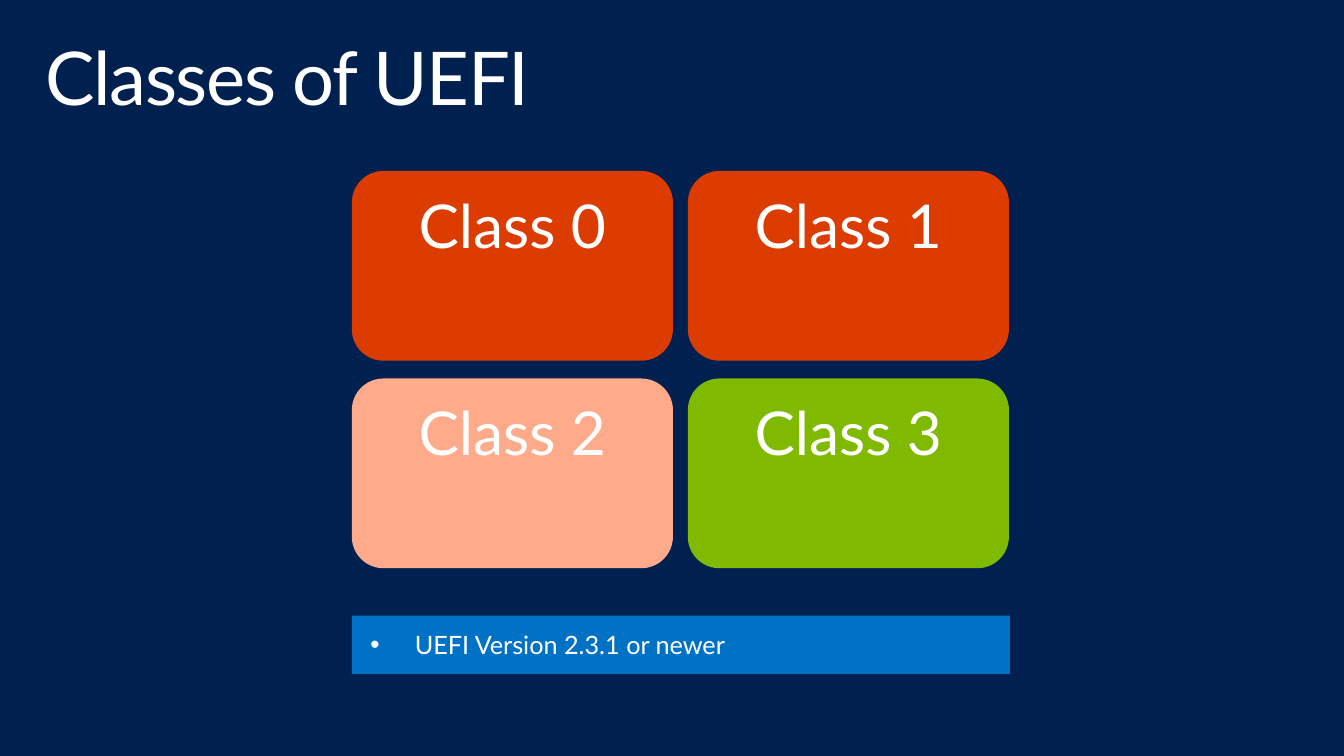
import pptx
import pptx.util
import pptx.dml.color
import pptx.enum.shapes
import pptx.enum.text
import lxml.etree
from pptx.util import Inches

MSO_SHAPE = pptx.enum.shapes.MSO_SHAPE
PP_ALIGN = pptx.enum.text.PP_ALIGN


def rgb(value):
    """Turn a hex string into a colour."""
    return pptx.dml.color.RGBColor.from_string(value)


class Deck:
    """Hold the style and the current slide."""

    font = "Lato"
    text_color = "FFFFFF"
    background = "002050"

    def __init__(self, prs):
        """Add a blank slide with the background colour."""
        self.s = prs.slides.add_slide(prs.slide_layouts[6])
        fill = self.s.background.fill
        fill.solid()
        fill.fore_color.rgb = rgb(self.background)

    def set_text(self, sp, text, size, inset_x, inset_y, align=PP_ALIGN.LEFT):
        """Put one styled paragraph in a shape and return it."""
        tf = sp.text_frame
        tf.text = text
        tf.word_wrap = True
        tf.vertical_anchor = pptx.enum.text.MSO_ANCHOR.TOP
        tf.margin_left = tf.margin_right = Inches(inset_x)
        tf.margin_top = tf.margin_bottom = Inches(inset_y)
        p = tf.paragraphs[0]
        p.alignment = align
        p.line_spacing = 0.9
        font = p.runs[0].font
        font.name = self.font
        font.size = pptx.util.Pt(size)
        font.color.rgb = rgb(self.text_color)
        return p

    def text(self, x, y, w, h, text, size, inset_x, inset_y):
        """Add a text box and return its paragraph."""
        sp = self.s.shapes.add_textbox(Inches(x), Inches(y), Inches(w), Inches(h))
        return self.set_text(sp, text, size, inset_x, inset_y)

    def title(self, x, y, w, h, text):
        """Add the slide title with tightened letters."""
        p = self.text(x, y, w, h, text, 54, 0.16, 0.1)
        p.runs[0]._r.get_or_add_rPr().set("spc", "-100")

    def shape(self, kind, x, y, w, h, color):
        """Add a filled shape without outline."""
        sp = self.s.shapes.add_shape(kind, Inches(x), Inches(y), Inches(w), Inches(h))
        sp.shadow.inherit = False
        sp.fill.solid()
        sp.fill.fore_color.rgb = rgb(color)
        sp.line.fill.background()
        return sp

    def card(self, x, y, w, h, text, color):
        """Add a rounded card with a centred heading."""
        sp = self.shape(MSO_SHAPE.ROUNDED_RECTANGLE, x, y, w, h, color)
        self.set_text(sp, text, 44, 0.2, 0.16, PP_ALIGN.CENTER)

    def bullet(self, x, y, w, h, text):
        """Add a text box with one bulleted line."""
        p = self.text(x, y, w, h, text, 18.4, 0.1, 0.05)
        pPr = p._p.get_or_add_pPr()
        pPr.set("marL", str(Inches(0.45)))
        pPr.set("indent", str(-Inches(0.45)))
        ns = "{http://schemas.openxmlformats.org/drawingml/2006/main}"
        for tag, key, value in (
            ("buSzPct", "val", "105000"),
            ("buFont", "typeface", "Arial"),
            ("buChar", "char", "•"),
        ):
            lxml.etree.SubElement(pPr, ns + tag).set(key, value)


def main():
    """Build the slide and save it."""
    prs = pptx.Presentation()
    prs.slide_width, prs.slide_height = Inches(13.6), Inches(7.65)
    deck = Deck(prs)
    deck.title(0.3, 0.32, 13, 1, "Classes of UEFI")

    left, top = 3.56, 1.73
    for i, color in enumerate(("DC3C00", "DC3C00", "FFAB8B", "7FBA00")):
        row, col = divmod(i, 2)
        deck.card(left + col * 3.4, top + row * 2.1, 3.25, 1.92, f"Class {i}", color)

    deck.shape(MSO_SHAPE.RECTANGLE, left, 6.23, 6.66, 0.59, "0072C6")
    deck.bullet(3.65, 6.35, 6.56, 0.39, "UEFI Version 2.3.1 or newer")
    prs.save("out.pptx")


if __name__ == "__main__":
    main()
